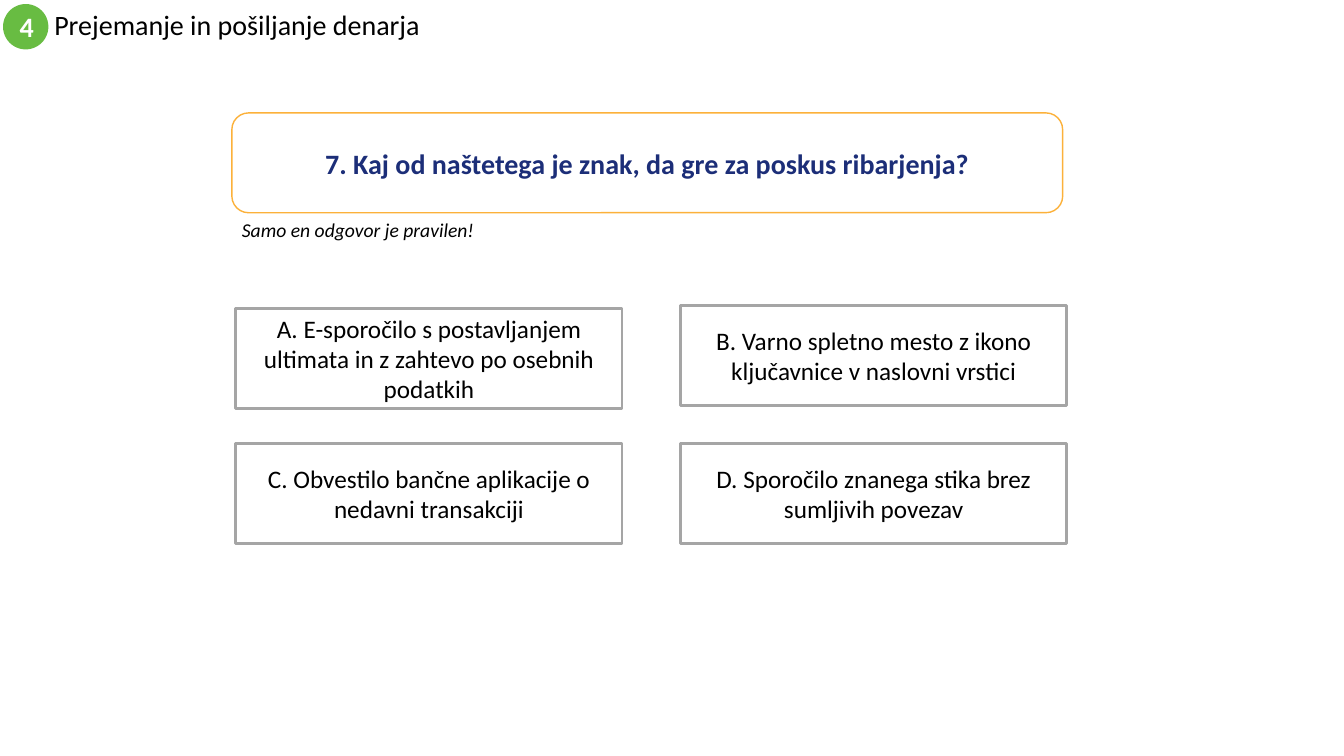
"""Build a quiz slide with one question and four possible answers."""
from pptx import Presentation
from pptx.dml.color import RGBColor
from pptx.enum.shapes import MSO_SHAPE
from pptx.enum.text import MSO_ANCHOR, PP_ALIGN
from pptx.util import Inches, Pt

OVAL, ROUNDED, RECTANGLE = MSO_SHAPE.OVAL, MSO_SHAPE.ROUNDED_RECTANGLE, MSO_SHAPE.RECTANGLE
TOP, MIDDLE = MSO_ANCHOR.TOP, MSO_ANCHOR.MIDDLE
LEFT, CENTER = PP_ALIGN.LEFT, PP_ALIGN.CENTER
COLORS = {
    "green": "68BC42",
    "orange": "FCB13A",
    "navy": "1C2E78",
    "gray": "A5A5A5",
    "white": "FFFFFF",
    "black": "000000",
}


def write(shape, text, size=20, color="black", bold=False, italic=False,
          align=CENTER, anchor=MIDDLE, spacing=None):
    frame = shape.text_frame
    frame.word_wrap = True
    frame.vertical_anchor = anchor
    paragraph = frame.paragraphs[0]
    paragraph.alignment = align
    paragraph.line_spacing = spacing
    run = paragraph.add_run()
    run.text = text
    run.font.name = "Calibri"
    run.font.size = Pt(size)
    run.font.bold = bold
    run.font.italic = italic
    run.font.color.rgb = RGBColor.from_string(COLORS[color])


def add_panel(kind, left, top, width, height, fill="white", line=None, weight=1):
    panel = slide.shapes.add_shape(
        kind, Inches(left), Inches(top), Inches(width), Inches(height))
    panel.shadow.inherit = False
    panel.fill.solid()
    panel.fill.fore_color.rgb = RGBColor.from_string(COLORS[fill])
    if line:
        panel.line.color.rgb = RGBColor.from_string(COLORS[line])
        panel.line.width = Pt(weight)
    else:
        panel.line.fill.background()
    return panel


deck = Presentation()
deck.slide_width, deck.slide_height = Inches(13.33), Inches(7.5)
slide = deck.slides.add_slide(deck.slide_layouts[6])

chapter_number = add_panel(OVAL, 0.03, 0.04, 0.45, 0.45, fill="green")
write(chapter_number, "4", color="white", bold=True)

chapter_title = slide.shapes.add_textbox(Inches(0.44), Inches(0.04), Inches(8), Inches(0.45))
write(chapter_title, "Prejemanje in pošiljanje denarja", align=LEFT, spacing=0.9)

question = add_panel(ROUNDED, 2.3, 1.12, 8.24, 0.99, line="orange")
write(question, "7. Kaj od naštetega je znak, da gre za poskus ribarjenja?",
      color="navy", bold=True)

hint = slide.shapes.add_textbox(Inches(2.3), Inches(2.11), Inches(2.72), Inches(0.34))
write(hint, "Samo en odgovor je pravilen!", size=14, italic=True, align=LEFT, anchor=TOP)

answers = [
    (2.34, 3.06, "A. E-sporočilo s postavljanjem ultimata in z zahtevo po osebnih podatkih"),
    (6.75, 3.03, "B. Varno spletno mesto z ikono ključavnice v naslovni vrstici"),
    (2.34, 4.4, "C. Obvestilo bančne aplikacije o nedavni transakciji"),
    (6.75, 4.4, "D. Sporočilo znanega stika brez sumljivih povezav"),
]
for left, top, text in answers:
    answer = add_panel(RECTANGLE, left, top, 3.83, 0.99, line="gray", weight=2)
    write(answer, text, size=18)

deck.save("out.pptx")
